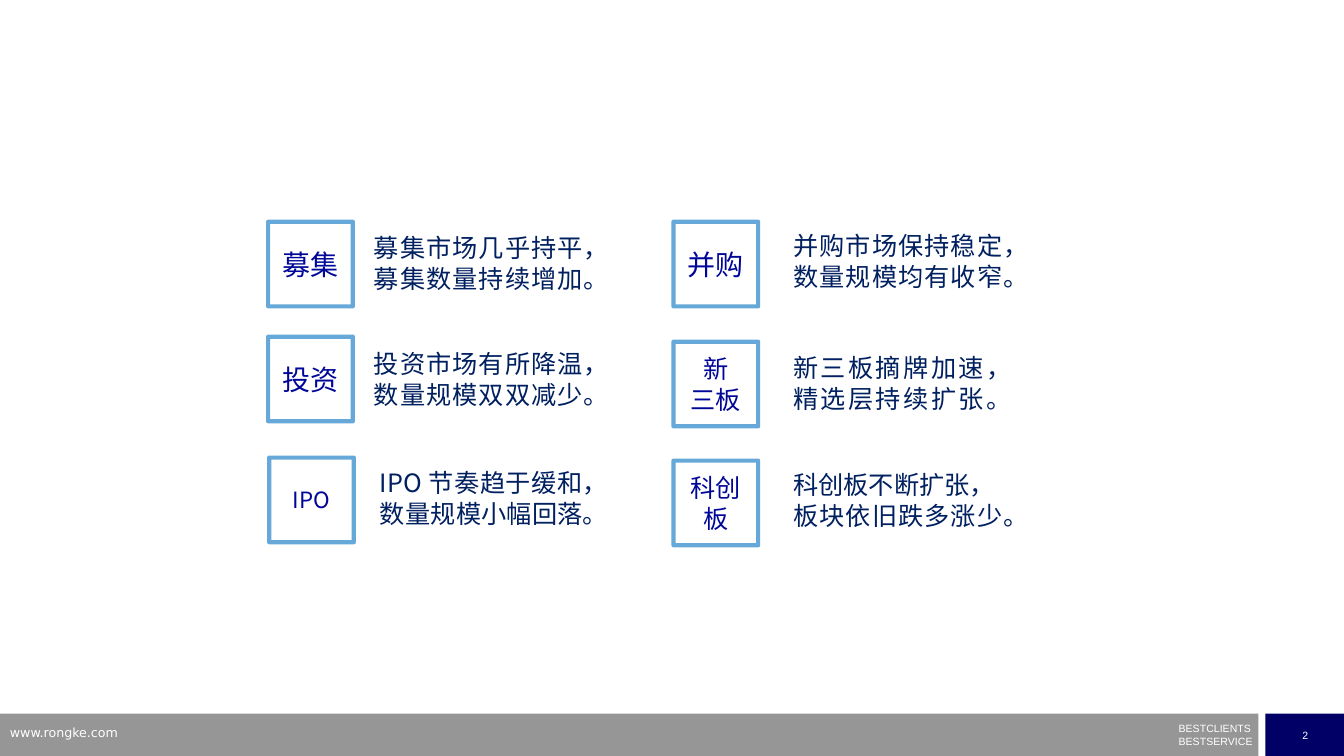
"""Build the market overview slide with six labelled topics and a footer."""
from lxml.etree import SubElement
from pptx import Presentation
from pptx.dml.color import RGBColor
from pptx.enum.shapes import MSO_SHAPE
from pptx.enum.text import MSO_ANCHOR, MSO_AUTO_SIZE, PP_ALIGN
from pptx.oxml.ns import qn
from pptx.util import Inches, Pt

COLORS = {
    "bar": "969696",
    "page": "000066",
    "white": "FFFFFF",
    "border": "0070C0",
    "label": "000798",
    "body": "002060",
}
LABEL_FONT = "Noto Sans CJK JP"
BODY_FONT = "Noto Sans CJK SC"
BOX_SIZE = 0.84
TOPICS = [
    ((2.66, 2.2), ["募集"], 20, (3.61, 2.26, 2.28), ["募集市场几乎持平，", "募集数量持续增加。"]),
    ((2.66, 3.34), ["投资"], 20, (3.61, 3.41, 2.28), ["投资市场有所降温，", "数量规模双双减少。"]),
    ((2.67, 4.54), ["IPO"], 16, (3.67, 4.59, 2.21), ["IPO 节奏趋于缓和，", "数量规模小幅回落。"]),
    ((6.68, 2.2), ["并购"], 20, (7.77, 2.24, 2.28), ["并购市场保持稳定，", "数量规模均有收窄。"]),
    ((6.68, 3.39), ["新", "三板"], 18, (7.77, 3.45, 2.11), ["新三板摘牌加速，", "精选层持续扩张。"]),
    ((6.68, 4.57), ["科创板"], 18, (7.77, 4.61, 2.28), ["科创板不断扩张，", "板块依旧跌多涨少。"]),
]


def color(name):
    return RGBColor.from_string(COLORS[name])


def write(frame, lines, font_name, size, color_name, alignment=PP_ALIGN.LEFT):
    frame.text = "\n".join(lines)
    for paragraph in frame.paragraphs:
        paragraph.alignment = alignment
        font = paragraph.font
        font.size = Pt(size)
        font.color.rgb = color(color_name)
        font.name = font_name
        properties = paragraph._p.pPr.find(qn("a:defRPr"))
        SubElement(properties, qn("a:ea"), typeface=font_name)


def add_rectangle(slide, left, top, width, height, fill=None):
    shape = slide.shapes.add_shape(
        MSO_SHAPE.RECTANGLE, Inches(left), Inches(top), Inches(width), Inches(height)
    )
    shape.shadow.inherit = False
    if fill:
        shape.fill.solid()
        shape.fill.fore_color.rgb = color(fill)
        shape.line.fill.background()
    else:
        shape.fill.background()
    shape.text_frame.vertical_anchor = MSO_ANCHOR.MIDDLE
    return shape


def add_text(slide, left, top, width, height):
    frame = slide.shapes.add_textbox(
        Inches(left), Inches(top), Inches(width), Inches(height)
    ).text_frame
    frame.word_wrap = True
    frame.auto_size = MSO_AUTO_SIZE.SHAPE_TO_FIT_TEXT
    return frame


def add_topic(slide, box_position, label, label_size, text_position, lines):
    box = add_rectangle(slide, *box_position, BOX_SIZE, BOX_SIZE)
    box.line.width = Pt(3)
    box.line.color.rgb = color("border")
    border = box.line._ln.find(f".//{qn('a:srgbClr')}")
    SubElement(border, qn("a:alpha"), val="60000")
    write(box.text_frame, label, LABEL_FONT, label_size, "label", PP_ALIGN.CENTER)
    frame = add_text(slide, *text_position, 0.71)
    write(frame, lines, BODY_FONT, 18, "body", PP_ALIGN.JUSTIFY)


def add_footer(slide):
    add_rectangle(slide, 0, 7.08, 12.48, 0.42, "bar")
    page = add_rectangle(slide, 12.55, 7.08, 0.79, 0.42, "page").text_frame
    page.word_wrap = False
    write(page, ["2"], "Arial", 7.5, "white", PP_ALIGN.CENTER)

    motto = add_text(slide, 11.69, 7.22, 0.76, 0.2)
    motto.margin_left = motto.margin_right = Inches(0)
    motto.margin_top = motto.margin_bottom = Inches(0)
    write(motto, ["BESTCLIENTS", "BESTSERVICE"], "Arial", 7.5, "white")
    for paragraph in motto.paragraphs:
        paragraph.line_spacing = 0.5
    motto.paragraphs[1].space_before = Pt(4.3)

    website = add_text(slide, 0, 7.14, 3.2, 0.26)
    write(website, ["www.rongke.com"], "DejaVu Sans", 9, "white")


def main():
    presentation = Presentation()
    presentation.slide_width = Inches(13.33)
    presentation.slide_height = Inches(7.5)
    slide = presentation.slides.add_slide(presentation.slide_layouts[6])
    add_footer(slide)
    for topic in TOPICS:
        add_topic(slide, *topic)
    presentation.save("out.pptx")


if __name__ == "__main__":
    main()
